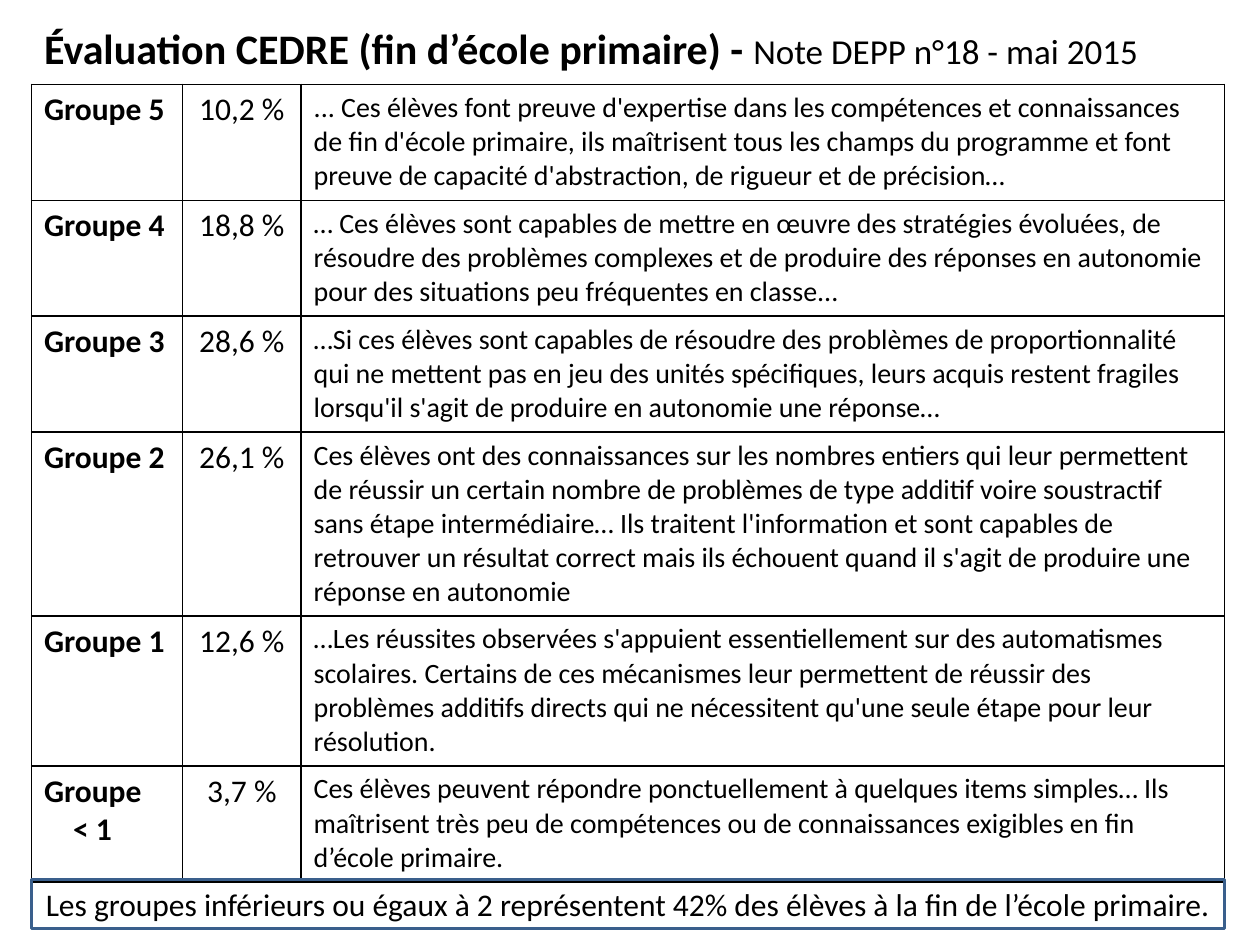
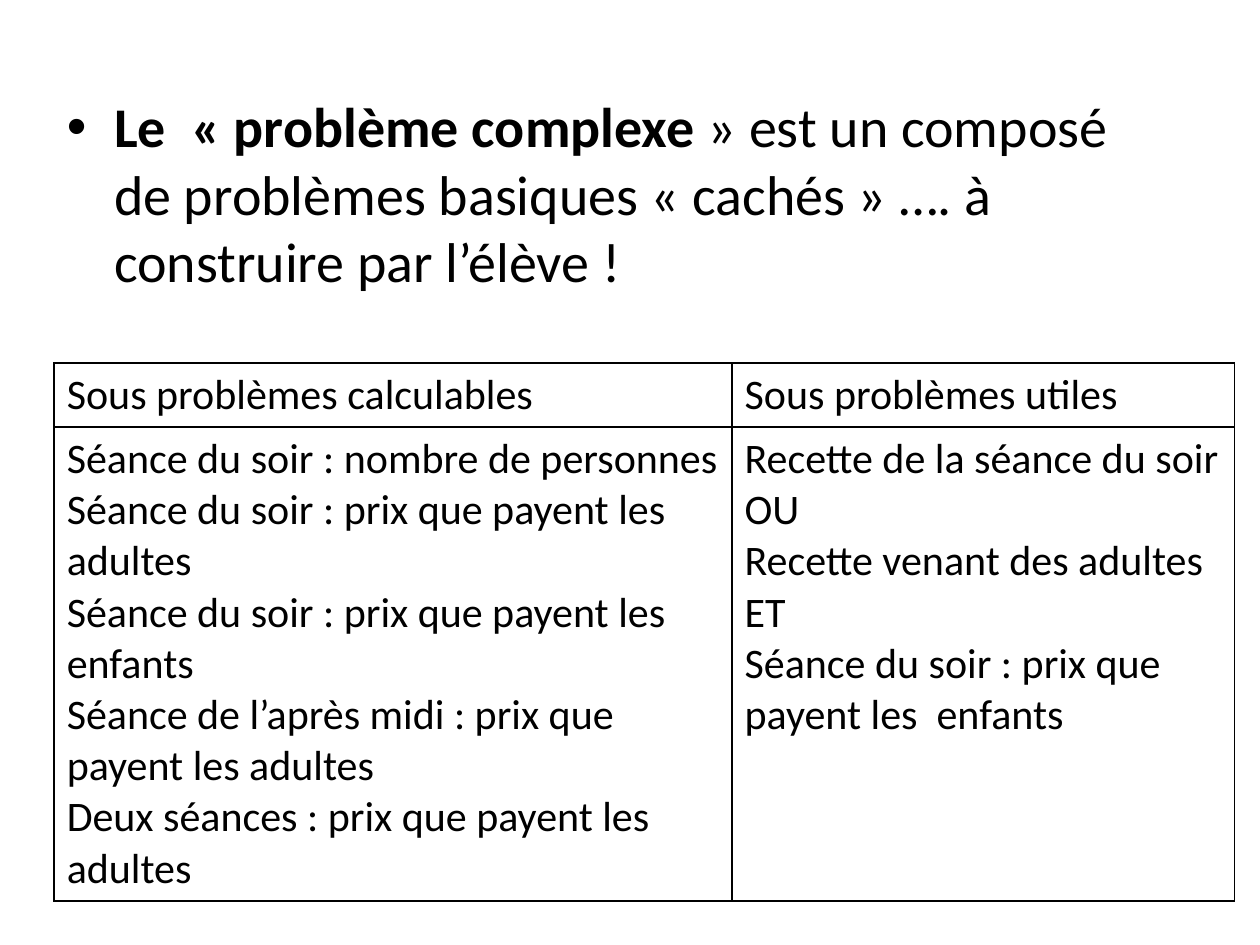
from lxml import etree
from pptx import Presentation
from pptx.dml.color import RGBColor
from pptx.enum.shapes import MSO_SHAPE
from pptx.enum.text import MSO_ANCHOR, MSO_AUTO_SIZE, PP_ALIGN
from pptx.oxml.ns import qn
from pptx.util import Inches, Pt

# Content: results by group
HEADING = [("Évaluation CEDRE (fin d’école primaire) - ", dict(size=Pt(24), bold=True)),
           ("Note DEPP n°18 - mai 2015", dict(size=Pt(20), bold=False))]
GROUPS = [
    (["Groupe 5"], ["10,2 %"],
     ["... Ces élèves font preuve d'expertise dans les compétences et connaissances "
      "de fin d'école primaire, ils maîtrisent tous les champs du programme et font "
      "preuve de capacité d'abstraction, de rigueur et de précision…"]),
    (["Groupe 4"], ["18,8 %"],
     ["… Ces élèves sont capables de mettre en œuvre des stratégies évoluées, de "
      "résoudre des problèmes complexes et de produire des réponses en autonomie "
      "pour des situations peu fréquentes en classe..."]),
    (["Groupe 3"], ["28,6 %"],
     ["…Si ces élèves sont capables de résoudre des problèmes de proportionnalité "
      "qui ne mettent pas en jeu des unités spécifiques, leurs acquis restent fragiles "
      "lorsqu'il s'agit de produire en autonomie une réponse…"]),
    (["Groupe 2"], ["26,1 %"],
     ["Ces élèves ont des connaissances sur les nombres entiers qui leur permettent "
      "de réussir un certain nombre de problèmes de type additif voire soustractif "
      "sans étape intermédiaire… Ils traitent l'information et sont capables de "
      "retrouver un résultat correct mais ils échouent quand il s'agit de produire une "
      "réponse en autonomie"]),
    (["Groupe 1"], ["12,6 %"],
     ["…Les réussites observées s'appuient essentiellement sur des automatismes "
      "scolaires. Certains de ces mécanismes leur permettent de réussir des "
      "problèmes additifs directs qui ne nécessitent qu'une seule étape pour leur "
      "résolution."]),
    (["Groupe", "< 1"], ["3,7 %"],
     ["Ces élèves peuvent répondre ponctuellement à quelques items simples… Ils "
      "maîtrisent très peu de compétences ou de connaissances exigibles en fin "
      "d’école primaire."]),
]
CONCLUSION = ("Les groupes inférieurs ou égaux à 2 représentent 42% des élèves "
              "à la fin de l’école primaire.")

# Content: complex problem
DEFINITION = [("Le  « problème complexe ", dict(size=Pt(32), bold=True)),
              ("» est un composé de problèmes basiques « cachés » …. à construire par l’élève !",
               dict(size=Pt(32), bold=False))]
SUBPROBLEMS = [
    (["Sous problèmes calculables"], ["Sous problèmes utiles"]),
    (["Séance du soir : nombre de personnes",
      "Séance du soir : prix que payent les adultes",
      "Séance du soir : prix que payent les enfants",
      "Séance de l’après midi : prix que payent les adultes",
      "Deux séances : prix que payent les adultes"],
     ["Recette de la séance du soir", "OU", "Recette venant des adultes", "ET",
      "Séance du soir : prix que payent les  enfants"]),
]

# Shared style
FONT = "Calibri"
BLACK = RGBColor(0x00, 0x00, 0x00)
WHITE = RGBColor(0xFF, 0xFF, 0xFF)
FRAME_BLUE = RGBColor(0x3A, 0x5F, 0x8C)
BORDER = Pt(0.96)
LEFT, WIDTH = 0.25, 9.47

# One (font, alignment) pair per table column
GROUP_STYLES = [(dict(size=Pt(18), bold=True), PP_ALIGN.LEFT),
                (dict(size=Pt(18), bold=False), PP_ALIGN.CENTER),
                (dict(size=Pt(16), bold=False), PP_ALIGN.LEFT)]
SUBPROBLEM_STYLES = [(dict(size=Pt(24), bold=False), PP_ALIGN.LEFT)] * 2


def add_run(paragraph, text, style):
    run = paragraph.add_run()
    run.text = text
    for name, value in dict(style, name=FONT).items():
        setattr(run.font, name, value)
    run.font.color.rgb = BLACK


def place(shape, left, top, width, height):
    for name, value in dict(left=left, top=top, width=width, height=height).items():
        setattr(shape, name, Inches(value))


def fill_placeholder(placeholder, box, runs):
    place(placeholder, *box)
    frame = placeholder.text_frame
    frame.auto_size = MSO_AUTO_SIZE.NONE
    frame.vertical_anchor = MSO_ANCHOR.TOP
    frame.paragraphs[0].alignment = PP_ALIGN.LEFT
    for text, style in runs:
        add_run(frame.paragraphs[0], text, style)


def draw_borders(cell):
    properties = cell._tc.get_or_add_tcPr()
    for side in ("a:lnL", "a:lnR", "a:lnT", "a:lnB"):
        line = etree.SubElement(properties, qn(side), w=str(int(BORDER)))
        solid = etree.SubElement(line, qn("a:solidFill"))
        etree.SubElement(solid, qn("a:srgbClr"), val=str(BLACK))


def add_grid(slide, left, top, widths, heights, rows, styles, fill=None):
    table = slide.shapes.add_table(
        len(rows), len(widths), Inches(left), Inches(top),
        Inches(sum(widths)), Inches(sum(heights))).table
    table.first_row = table.horz_banding = False
    for column, width in zip(table.columns, widths):
        column.width = Inches(width)
    for row, height, texts in zip(table.rows, heights, rows):
        row.height = Inches(height)
        for cell, lines, (style, alignment) in zip(row.cells, texts, styles):
            draw_borders(cell)
            if fill is None:
                cell.fill.background()
            else:
                cell.fill.solid()
                cell.fill.fore_color.rgb = fill
            frame = cell.text_frame
            for number, line in enumerate(lines):
                paragraph = frame.add_paragraph() if number else frame.paragraphs[0]
                paragraph.alignment = alignment
                add_run(paragraph, line, style)
    return table


def build_results(deck):
    slide = deck.slides.add_slide(deck.slide_layouts[5])
    fill_placeholder(slide.shapes.title, (LEFT, 0.13, WIDTH, 6.26), HEADING)
    groups = add_grid(slide, LEFT, 0.67, [1.2, 0.94, 7.33],
                      [0.92, 0.92, 0.92, 1.46, 1.19, 0.92],
                      GROUPS, GROUP_STYLES, WHITE)
    # Indent the second line of the last group name
    below_one = groups.cell(len(GROUPS) - 1, 0).text_frame.paragraphs[1]
    below_one._p.get_or_add_pPr().set("marL", str(Inches(0.23)))

    # Framed conclusion
    conclusion = slide.shapes.add_shape(
        MSO_SHAPE.RECTANGLE, Inches(LEFT), Inches(6.98), Inches(WIDTH), Inches(0.39))
    conclusion.shadow.inherit = False
    conclusion.fill.background()
    conclusion.line.color.rgb = FRAME_BLUE
    conclusion.line.width = Pt(2)
    frame = conclusion.text_frame
    frame.word_wrap = True
    frame.vertical_anchor = MSO_ANCHOR.MIDDLE
    frame.paragraphs[0].alignment = PP_ALIGN.CENTER
    add_run(frame.paragraphs[0], CONCLUSION, dict(size=Pt(18), bold=False))


def build_complex_problem(deck):
    slide = deck.slides.add_slide(deck.slide_layouts[1])
    title = slide.shapes.title.element
    title.getparent().remove(title)
    fill_placeholder(slide.placeholders[1], (0.43, 0.68, 9, 5.97), DEFINITION)
    add_grid(slide, 0.43, 2.88, [5.38, 3.99], [0.51, 3.76],
             SUBPROBLEMS, SUBPROBLEM_STYLES)


def main():
    deck = Presentation()
    deck.slide_width, deck.slide_height = Inches(10), Inches(7.5)
    build_results(deck)
    build_complex_problem(deck)
    deck.save("out.pptx")


if __name__ == "__main__":
    main()
